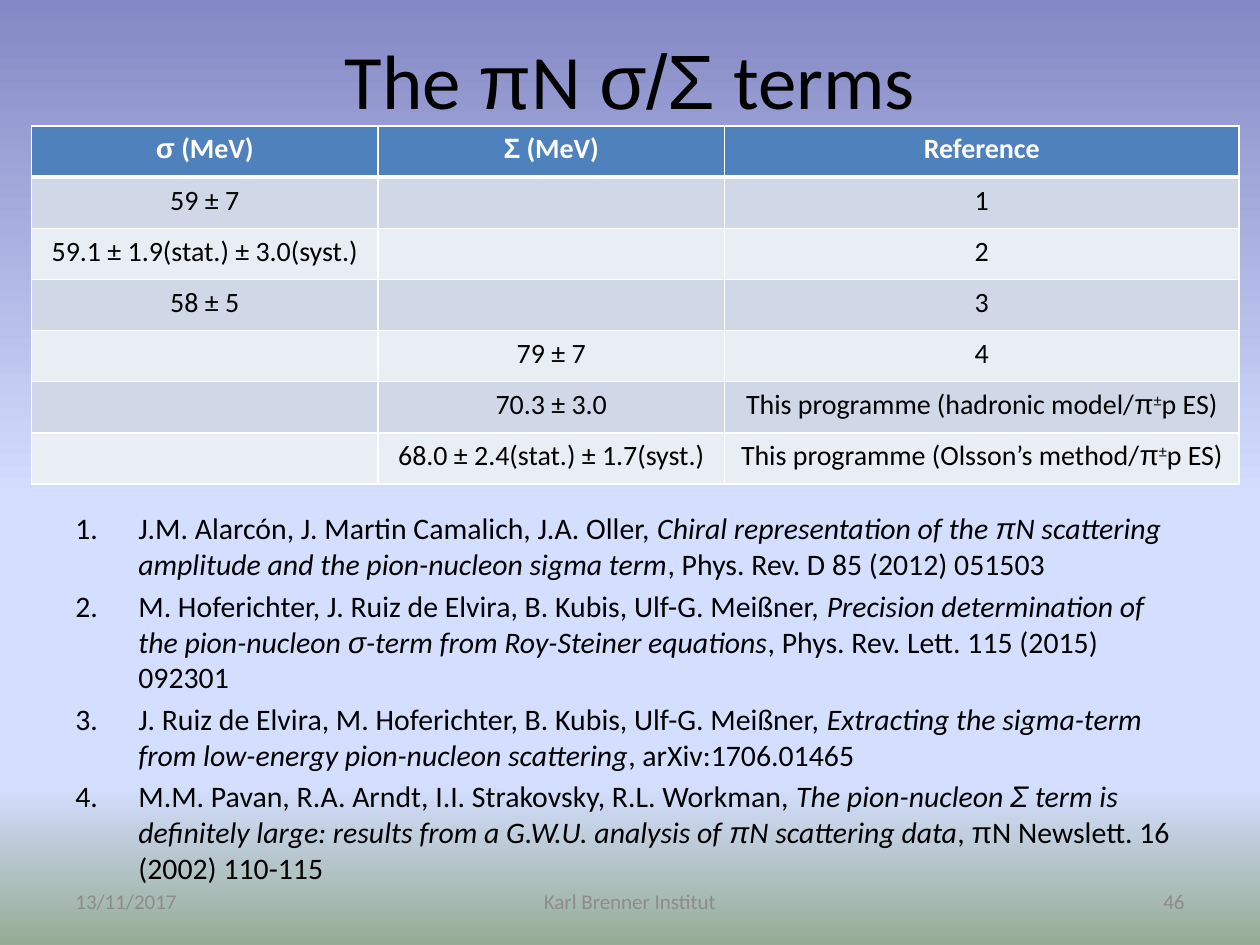
from dataclasses import dataclass

import lxml.etree
import pptx
import pptx.dml.color
import pptx.enum.text
import pptx.oxml.ns
import pptx.util

RGBColor = pptx.dml.color.RGBColor
ALIGN = pptx.enum.text.PP_ALIGN
ANCHOR = pptx.enum.text.MSO_ANCHOR
qn = pptx.oxml.ns.qn

BLACK = RGBColor(0x00, 0x00, 0x00)
WHITE = RGBColor(0xFF, 0xFF, 0xFF)
GREY = RGBColor(0x8C, 0x8C, 0x8C)
HEADER_BLUE = RGBColor(0x4F, 0x81, 0xBD)
BAND_DARK = RGBColor(0xD0, 0xD8, 0xE8)
BAND_LIGHT = RGBColor(0xE9, 0xED, 0xF4)
SKY_TOP = RGBColor(0x84, 0x88, 0xC4)
SKY_PALE = RGBColor(0xD4, 0xDE, 0xFF)
GROUND = RGBColor(0x96, 0xAB, 0x94)
SKY_STOPS = [(0, SKY_TOP), (53, SKY_PALE), (83, SKY_PALE), (100, GROUND)]

# The slide is a grid of 120 columns by 90 rows of square units
UNIT = pptx.util.Inches(10) / 120

# Markup in texts: *italic*, ^superscript^, ~Arial~
MARKERS = "*^~"


@dataclass
class Box:
    column: float
    row: float
    columns: float
    rows: float

    def lengths(self) -> list[int]:
        return [units(n) for n in (self.column, self.row, self.columns, self.rows)]


@dataclass
class Footer:
    text: str
    column: float
    columns: float
    align: ALIGN


FOOTERS = [
    Footer("13/11/2017", 6, 28, ALIGN.LEFT),
    Footer("Karl Brenner Institut", 41, 38, ALIGN.CENTER),
    Footer("46", 86, 28, ALIGN.RIGHT),
]
TABLE_BOX = Box(3, 12, 115, 34.1)
TABLE_COLUMNS = [33, 33, 49]
TABLE_ROWS = [
    ("~σ~ (MeV)", "~Σ~ (MeV)", "Reference"),
    ("59 ± 7", "", "1"),
    ("59.1 ± 1.9(stat.) ± 3.0(syst.)", "", "2"),
    ("58 ± 5", "", "3"),
    ("", "79 ± 7", "4"),
    ("", "70.3 ± 3.0", "This programme (hadronic model/~π~^±^p ES)"),
    ("", "68.0 ± 2.4(stat.) ± 1.7(syst.)",
     "This programme (Olsson’s method/~π~^±^p ES)"),
]
REFERENCES = [
    "J.M. Alarcón, J. Martin Camalich, J.A. Oller, *Chiral representation of the "
    "~π~N scattering amplitude and the pion-nucleon sigma term*, "
    "Phys. Rev. D 85 (2012) 051503",
    "M. Hoferichter, J. Ruiz de Elvira, B. Kubis, Ulf-G. Meißner, *Precision "
    "determination of the pion-nucleon ~σ~-term from Roy-Steiner equations*, "
    "Phys. Rev. Lett. 115 (2015) 092301",
    "J. Ruiz de Elvira, M. Hoferichter, B. Kubis, Ulf-G. Meißner, *Extracting the "
    "sigma-term from low-energy pion-nucleon scattering*, arXiv:1706.01465",
    "M.M. Pavan, R.A. Arndt, I.I. Strakovsky, R.L. Workman, *The pion-nucleon ~Σ~ "
    "term is definitely large: results from a G.W.U. analysis of ~π~N scattering "
    "data*, ~π~N Newslett. 16 (2002) 110-115",
]


def units(count: float) -> int:
    return round(count * UNIT)


def split_markup(text: str) -> list[tuple[str, frozenset]]:
    """Cut a text into pieces, each with the set of markers in force."""
    pieces, active, piece = [], frozenset(), ""
    for character in text:
        if character in MARKERS:
            pieces.append((piece, active))
            active, piece = active ^ {character}, ""
        else:
            piece += character
    pieces.append((piece, active))
    return [(words, markers) for words, markers in pieces if words]


def write_text(paragraph, text: str, *, size: float, color: RGBColor = BLACK,
               align: ALIGN = ALIGN.LEFT, bold: bool = False) -> None:
    paragraph.alignment = align
    for words, markers in split_markup(text):
        run = paragraph.add_run()
        run.text = words
        run.font.size = pptx.util.Pt(size)
        run.font.name = "Arial" if "~" in markers else "Calibri"
        run.font.color.rgb = color
        run.font.bold = bold
        run.font.italic = "*" in markers
        if "^" in markers:
            run.font.element.set("baseline", "30000") if hasattr(
                run.font, "element") else run._r.get_or_add_rPr().set("baseline", "30000")


def add_text_frame(slide, box: Box, anchor: ANCHOR):
    frame = slide.shapes.add_textbox(*box.lengths()).text_frame
    frame.word_wrap = True
    frame.vertical_anchor = anchor
    return frame


def paint_background(slide) -> None:
    fill = slide.background.fill
    fill.gradient()
    fill.gradient_angle = 270
    stops = slide.element.find(".//" + qn("a:gsLst"))
    for stop in list(stops):
        stops.remove(stop)
    for position, color in SKY_STOPS:
        stop = lxml.etree.SubElement(stops, qn("a:gs"), pos=str(position * 1000))
        lxml.etree.SubElement(stop, qn("a:srgbClr"), val=str(color))


def number_paragraph(paragraph) -> None:
    properties = paragraph._p.get_or_add_pPr()
    indent = units(6)
    properties.set("marL", str(indent))
    properties.set("indent", str(-indent))
    lxml.etree.SubElement(properties, qn("a:buFont"), typeface="+mj-lt")
    lxml.etree.SubElement(properties, qn("a:buAutoNum"), type="arabicPeriod")


def set_borders(cell, bottom_width: float) -> None:
    properties = cell._tc.get_or_add_tcPr()
    widths = {"a:lnL": 1, "a:lnR": 1, "a:lnT": 1, "a:lnB": bottom_width}
    for index, (tag, width) in enumerate(widths.items()):
        line = lxml.etree.Element(qn(tag), w=str(pptx.util.Pt(width)))
        solid = lxml.etree.SubElement(line, qn("a:solidFill"))
        lxml.etree.SubElement(solid, qn("a:srgbClr"), val=str(WHITE))
        properties.insert(index, line)


def add_results_table(slide) -> None:
    table = slide.shapes.add_table(
        len(TABLE_ROWS), len(TABLE_COLUMNS), *TABLE_BOX.lengths()).table
    for column, width in zip(table.columns, TABLE_COLUMNS):
        column.width = units(width)
    for row_index, texts in enumerate(TABLE_ROWS):
        header = row_index == 0
        band = BAND_DARK if row_index % 2 else BAND_LIGHT
        for column_index, text in enumerate(texts):
            cell = table.cell(row_index, column_index)
            cell.fill.solid()
            cell.fill.fore_color.rgb = HEADER_BLUE if header else band
            # The rule under the header is shared with the first body row
            set_borders(cell, bottom_width=3 if header else 1)
            if row_index == 1:
                cell._tc.tcPr.find(qn("a:lnT")).set("w", str(pptx.util.Pt(3)))
            write_text(cell.text_frame.paragraphs[0], text, size=16, bold=header,
                       color=WHITE if header else BLACK, align=ALIGN.CENTER)


def add_references(slide) -> None:
    frame = add_text_frame(slide, Box(6, 48, 108, 36), ANCHOR.TOP)
    for index, reference in enumerate(REFERENCES):
        paragraph = frame.add_paragraph() if index else frame.paragraphs[0]
        paragraph.space_before = pptx.util.Pt(3.4)
        number_paragraph(paragraph)
        write_text(paragraph, reference, size=17)


def main() -> None:
    presentation = pptx.Presentation()
    presentation.slide_width = units(120)
    presentation.slide_height = units(90)
    slide = presentation.slides.add_slide(presentation.slide_layouts[6])
    paint_background(slide)

    # Title
    title = add_text_frame(slide, Box(6, 0, 108, 15), ANCHOR.MIDDLE)
    write_text(title.paragraphs[0], "The ~π~N ~σ/Σ~ terms", size=44,
               align=ALIGN.CENTER)

    # Body
    add_references(slide)
    add_results_table(slide)

    # Footer line
    for footer in FOOTERS:
        frame = add_text_frame(
            slide, Box(footer.column, 83.4, footer.columns, 4.8), ANCHOR.MIDDLE)
        write_text(frame.paragraphs[0], footer.text, size=12, color=GREY,
                   align=footer.align)

    presentation.save("out.pptx")


if __name__ == "__main__":
    main()
